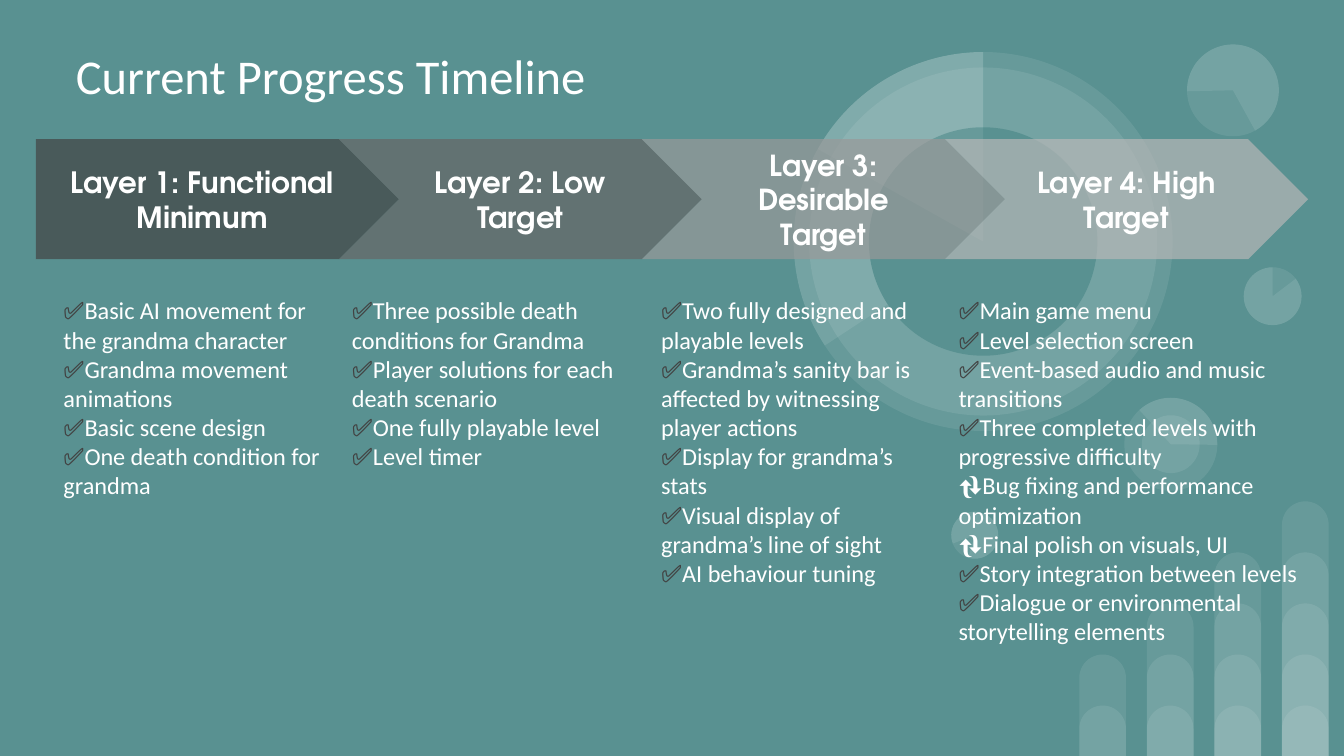
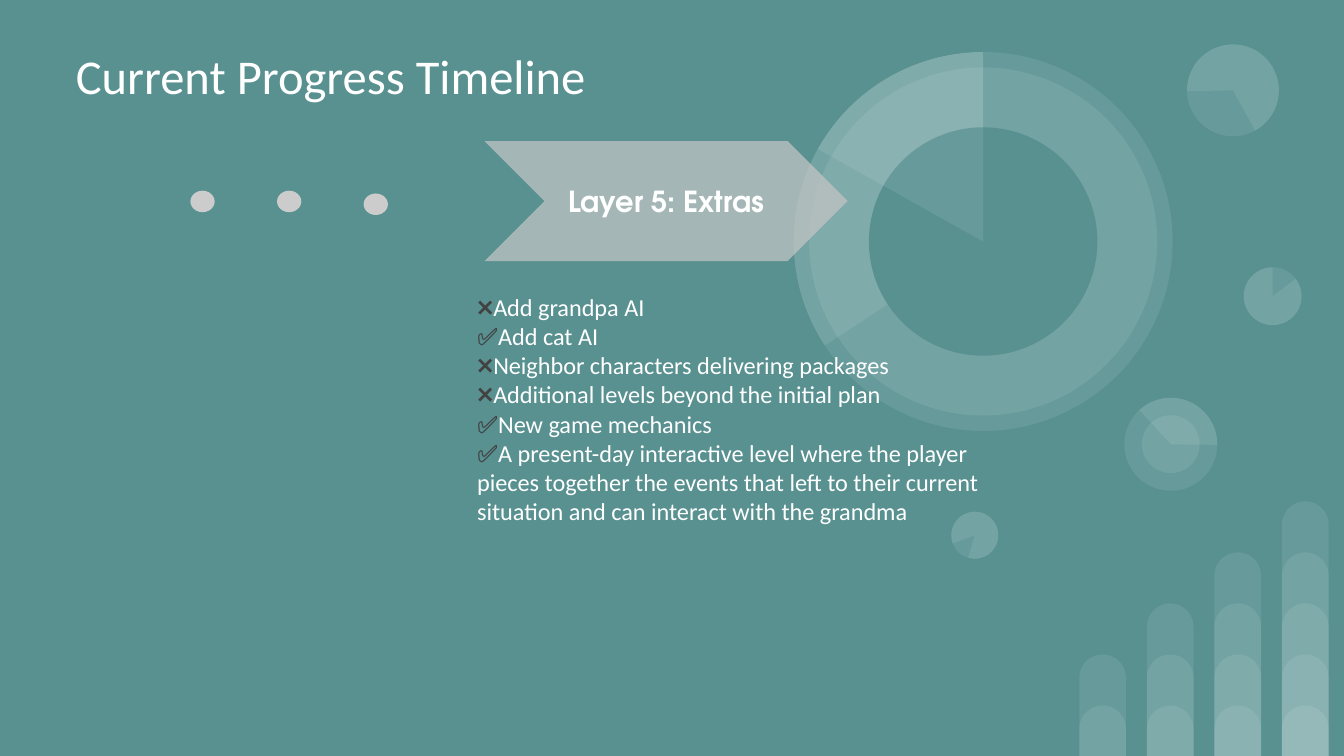
from dataclasses import dataclass
from typing import Optional

from pptx import Presentation
from pptx.dml.color import RGBColor
from pptx.enum.shapes import MSO_SHAPE as Shp
from pptx.enum.text import MSO_ANCHOR as Anchor, MSO_AUTO_SIZE as AutoSize, PP_ALIGN as Align
from pptx.oxml.ns import qn
from pptx.util import Pt
from lxml.etree import SubElement

TEAL = RGBColor(0x59, 0x91, 0x91)
WHITE = RGBColor(0xFF, 0xFF, 0xFF)
MARK_GREY = RGBColor(0x42, 0x42, 0x42)
DOT_GREY = RGBColor(0xCC, 0xCC, 0xCC)
LAYER_GREYS = [RGBColor(v, v, v) for v in (0x43, 0x66, 0x99, 0xB7, 0xC6)]

BODY_FONT = "Calibri"
LAYER_FONT = "TeX Gyre Adventor"
TITLE = "Current Progress Timeline"
WIDTH, HEIGHT = 720, 405
CONTENT_LAYOUT, COMPARISON_LAYOUT = 1, 4
DECOR_ALPHA, LAYER_ALPHA = 9, 70
LAYER_LEFT, LAYER_TOP, LAYER_PITCH = 19.2, 74.6, 162.36
LAYER_W, LAYER_H = 194.5, 64.3


@dataclass(frozen=True)
class Box:
    left: float
    top: float
    width: float
    height: float


@dataclass(frozen=True)
class Disc:
    """A circle, or a pie between two angles in degrees, around a centre."""
    cx: float
    cy: float
    size: float
    rotation: float = 0
    pie: Optional[tuple[float, float]] = None
    color: RGBColor = WHITE
    alpha: int = DECOR_ALPHA


@dataclass(frozen=True)
class Layer:
    label: str
    color: RGBColor
    box: Box
    size: float = 15.5
    kind: Shp = Shp.CHEVRON
    inset: float = 8


@dataclass(frozen=True)
class Checklist:
    """Each item begins with its status mark."""
    box: Box
    items: tuple[str, ...]


DISCS = (
    Disc(681.8, 158.7, 31),
    Disc(681.8, 158.7, 31, pie=(322.95, 270)),
    Disc(522.2, 286.7, 25.2, 196.2),
    Disc(522.2, 286.7, 25.2, 196.2, (322.95, 270)),
    Disc(627.2, 238, 49.8, 90),
    Disc(627.2, 238, 49.8, 90, (137.41, 270.77)),
    Disc(627.2, 238, 31, 90),
    Disc(660.5, 48.4, 49.2, 215.9),
    Disc(660.5, 48.4, 49.2, 215.9, (322.95, 205.23)),
    Disc(526.7, 129.4, 203),
    Disc(526.7, 129.4, 186.5, 34.1),
    Disc(526.7, 129.4, 203, pie=(146.69, 270)),
    Disc(526.7, 129.4, 122.4, 34.1, color=TEAL, alpha=100),
    Disc(526.7, 129.4, 203, pie=(209.24, 270)),
)


def layer_box(column: int) -> Box:
    return Box(LAYER_LEFT + column * LAYER_PITCH, LAYER_TOP, LAYER_W, LAYER_H)


LAYERS = (
    Layer("Layer 1: Functional Minimum", LAYER_GREYS[0], layer_box(0), 15.7, Shp.PENTAGON, 9.4),
    Layer("Layer 2: Low Target", LAYER_GREYS[1], layer_box(1), 15.7),
    Layer("Layer 3: Desirable Target", LAYER_GREYS[2], layer_box(2)),
    Layer("Layer 4: High Target", LAYER_GREYS[3], layer_box(3)),
)
EXTRAS_LAYER = Layer("Layer 5: Extras", LAYER_GREYS[4], Box(259.6, 75.6, LAYER_W, LAYER_H))

CHECKLISTS = (
    Checklist(Box(26.8, 151.2, 159.1, 152.6), (
        "✅Basic AI movement for the grandma character",
        "✅Grandma movement animations",
        "✅Basic scene design",
        "✅One death condition for grandma",
    )),
    Checklist(Box(181.3, 151.2, 159.1, 152.6), (
        "✅Three possible death conditions for Grandma",
        "✅Player solutions for each death scenario",
        "✅One fully playable level",
        "✅Level timer",
    )),
    Checklist(Box(347, 151.2, 159.1, 196.6), (
        "✅Two fully designed and playable levels",
        "✅Grandma’s sanity bar is affected by witnessing player actions",
        "✅Display for grandma’s stats",
        "✅Visual display of grandma’s line of sight",
        "✅AI behaviour tuning",
    )),
    Checklist(Box(506.3, 151.2, 203, 217.4), (
        "✅Main game menu",
        "✅Level selection screen",
        "✅Event-based audio and music transitions",
        "✅Three completed levels with progressive difficulty",
        "🔃Bug fixing and performance optimization",
        "🔃Final polish on visuals, UI",
        "✅Story integration between levels",
        "✅Dialogue or environmental storytelling elements",
    )),
)
EXTRAS_CHECKLIST = Checklist(Box(248.4, 149.3, 296.6, 239), (
    "❌Add grandpa AI",
    "✅Add cat AI",
    "❌Neighbor characters delivering packages",
    "❌Additional levels beyond the initial plan",
    "✅New game mechanics",
    "✅A present-day interactive level where the player pieces together the events "
    "that left to their current situation and can interact with the grandma",
))

DOTS = [Box(102 + 46.4 * i, top, 13, 11.5) for i, top in enumerate((102.2, 102.2, 103.7))]


def place(s, box: Box) -> None:
    s.left, s.top = Pt(box.left), Pt(box.top)
    s.width, s.height = Pt(box.width), Pt(box.height)


def style_run(r, size: float, color: RGBColor, font: str = BODY_FONT, bold: bool = False) -> None:
    r.font.size, r.font.name, r.font.bold = Pt(size), font, bold
    r.font.color.rgb = color


def set_frame(tf, inset: float, anchor: Anchor) -> None:
    tf.word_wrap, tf.auto_size, tf.vertical_anchor = True, AutoSize.NONE, anchor
    tf.margin_left = tf.margin_right = tf.margin_top = tf.margin_bottom = Pt(inset)


def add_filled(slide, kind: Shp, box: Box, color: RGBColor, alpha: int = 100):
    """Add a flat shape without outline; alpha is its opacity in percent."""
    s = slide.shapes.add_shape(kind, Pt(box.left), Pt(box.top), Pt(box.width), Pt(box.height))
    s.shadow.inherit = False
    s.line.fill.background()
    s.fill.solid()
    s.fill.fore_color.rgb = color
    if alpha < 100:
        rgb = s._element.spPr.find(qn("a:solidFill")).find(qn("a:srgbClr"))
        SubElement(rgb, qn("a:alpha")).set("val", str(alpha * 1000))
    return s


def add_bars(slide) -> list:
    """Add four columns of overlapping rounded bars, each one step taller."""
    bars = []
    for column in range(4):
        for step in range(column + 2):
            height = 27 + 27.35 * step
            box = Box(578.2 + 36.2 * column, HEIGHT - height, 25, height)
            s = add_filled(slide, Shp.ROUND_2_SAME_RECTANGLE, box, WHITE, DECOR_ALPHA)
            s.adjustments[0] = 0.5
            bars.append(s)
    return bars


def add_disc(slide, disc: Disc):
    half = disc.size / 2
    box = Box(disc.cx - half, disc.cy - half, disc.size, disc.size)
    s = add_filled(slide, Shp.PIE if disc.pie else Shp.OVAL, box, disc.color, disc.alpha)
    s.rotation = disc.rotation
    for i, angle in enumerate(disc.pie or ()):
        s.adjustments[i] = angle * 0.6  # 60000ths of a degree, scaled by 100000
    return s


def decorate_master(master, slide) -> None:
    """Draw the shared background on a slide and move it to the master."""
    master.background.fill.solid()
    master.background.fill.fore_color.rgb = TEAL
    decor = add_bars(slide) + [add_disc(slide, disc) for disc in DISCS]
    for i, s in enumerate(decor):
        s._element.nvSpPr.cNvPr.set("id", str(100 + i))
        master.shapes._spTree.insert(2 + i, s._element)


def set_title(slide) -> None:
    s = slide.shapes.title
    place(s, Box(33.4, 17.3, 403, 38))
    tf = s.text_frame
    tf.text = TITLE
    set_frame(tf, 7.2, Anchor.TOP)
    p = tf.paragraphs[0]
    p.alignment = Align.LEFT
    style_run(p.runs[0], 26, WHITE)


def add_layer(slide, layer: Layer) -> None:
    s = add_filled(slide, layer.kind, layer.box, layer.color, LAYER_ALPHA)
    s.adjustments[0] = 0.5
    tf = s.text_frame
    tf.text = layer.label
    set_frame(tf, layer.inset, Anchor.MIDDLE)
    p = tf.paragraphs[0]
    p.alignment = Align.CENTER
    style_run(p.runs[0], layer.size, WHITE, LAYER_FONT, bold=True)


def fill_checklist(s, checklist: Checklist) -> None:
    place(s, checklist.box)
    tf = s.text_frame
    tf.text = "\n".join(item[0] for item in checklist.items)
    set_frame(tf, 7.2, Anchor.TOP)
    for p, item in zip(tf.paragraphs, checklist.items):
        p.alignment, p.space_before = Align.LEFT, Pt(0)
        pPr = p._p.get_or_add_pPr()
        pPr.set("marL", "0")
        pPr.set("indent", "0")
        SubElement(pPr, qn("a:buNone"))
        style_run(p.runs[0], 13, WHITE if item[0] == "🔃" else MARK_GREY)
        r = p.add_run()
        r.text = item[1:]
        style_run(r, 13, WHITE)


def build_layers_slide(slide) -> None:
    set_title(slide)
    for layer in LAYERS:
        add_layer(slide, layer)
    for i, checklist in enumerate(CHECKLISTS, start=1):
        fill_checklist(slide.placeholders[i], checklist)


def build_extras_slide(slide) -> None:
    set_title(slide)
    add_layer(slide, EXTRAS_LAYER)
    fill_checklist(slide.placeholders[1], EXTRAS_CHECKLIST)
    for box in DOTS:
        add_filled(slide, Shp.OVAL, box, DOT_GREY)


def main() -> None:
    prs = Presentation()
    prs.slide_width, prs.slide_height = Pt(WIDTH), Pt(HEIGHT)
    layers_slide = prs.slides.add_slide(prs.slide_layouts[COMPARISON_LAYOUT])
    extras_slide = prs.slides.add_slide(prs.slide_layouts[CONTENT_LAYOUT])
    decorate_master(prs.slide_master, layers_slide)
    build_layers_slide(layers_slide)
    build_extras_slide(extras_slide)
    prs.save("out.pptx")


if __name__ == "__main__":
    main()
